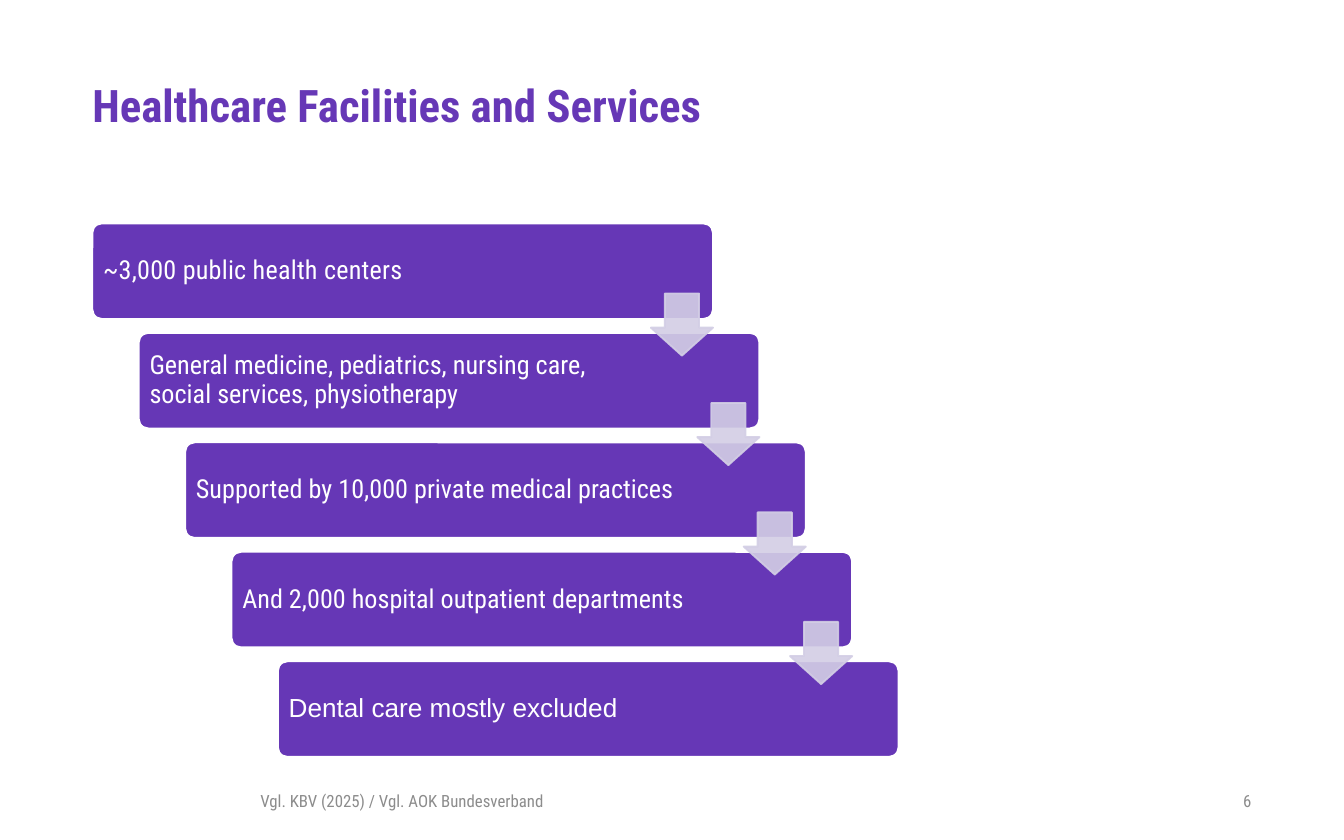
from lxml.etree import SubElement
from pptx import Presentation
from pptx.dml.color import RGBColor
from pptx.enum.shapes import MSO_SHAPE
from pptx.enum.text import MSO_ANCHOR, MSO_AUTO_SIZE, PP_ALIGN
from pptx.oxml.ns import qn
from pptx.util import Pt

PURPLE = RGBColor(0x66, 0x37, 0xB6)
TITLE_PURPLE = RGBColor(0x66, 0x38, 0xB6)
LILAC = RGBColor(0xD3, 0xCE, 0xE5)
GRAY = RGBColor(0x8C, 0x8C, 0x8C)
WHITE = RGBColor(0xFF, 0xFF, 0xFF)

CONDENSED = "Roboto Condensed"
STEP_X, STEP_Y = 24.85, 58.65
STEPS = [
    ("~3,000 public health centers", CONDENSED, 10),
    ("General medicine, pediatrics, nursing care, social services, physiotherapy", CONDENSED, 0),
    ("Supported by 10,000 private medical practices", CONDENSED, 0),
    ("And 2,000 hospital outpatient departments", CONDENSED, 0),
    ("Dental care mostly excluded", "Arial", 0),
]


class StairSlide:
    title_font = {"name": CONDENSED, "size": Pt(24), "bold": True}
    step_font = {"size": Pt(14), "bold": False}
    footer_font = {"name": CONDENSED, "size": Pt(9), "bold": False}

    def __init__(self, prs):
        self.s = prs.slides.add_slide(prs.slide_layouts[5])

    def text(self, sp, text, font, color, margins=(0, 0, 0, 0),
             anchor=MSO_ANCHOR.MIDDLE, align=PP_ALIGN.LEFT, spacing=1.0, tracking=0):
        tf = sp.text_frame
        frame = {"word_wrap": True, "auto_size": MSO_AUTO_SIZE.NONE, "vertical_anchor": anchor}
        sides = ("margin_left", "margin_top", "margin_right", "margin_bottom")
        frame.update(zip(sides, map(Pt, margins)))
        for name, value in frame.items():
            setattr(tf, name, value)
        p = tf.paragraphs[0]
        p.alignment, p.line_spacing = align, spacing
        r = p.add_run()
        r.text = text
        for name, value in font.items():
            setattr(r.font, name, value)
        r.font.color.rgb = color
        if tracking:
            r._r.get_or_add_rPr().set("spc", str(tracking))

    def title(self, text, box):
        sp = self.s.shapes.title
        sp.left, sp.top, sp.width, sp.height = map(Pt, box)
        self.text(sp, text, self.title_font, TITLE_PURPLE, anchor=MSO_ANCHOR.TOP, spacing=0.9)

    def shape(self, kind, box, adjustments, fill, line):
        sp = self.s.shapes.add_shape(kind, *map(Pt, box))
        sp.shadow.inherit = False
        for i, value in enumerate(adjustments):
            sp.adjustments[i] = value
        sp.fill.solid()
        sp.fill.fore_color.rgb = fill
        sp.line.color.rgb = line
        sp.line.width = Pt(1)
        return sp

    def step(self, text, face, tracking, box):
        sp = self.shape(MSO_SHAPE.ROUNDED_RECTANGLE, box, [0.1], PURPLE, WHITE)
        self.text(sp, text, {**self.step_font, "name": face}, WHITE,
                  margins=(4.3, 4.3, 62.5, 4.3), spacing=0.9, tracking=tracking)

    def arrow(self, box):
        sp = self.shape(MSO_SHAPE.DOWN_ARROW, box, [0.55, 0.45], LILAC, LILAC)
        for color in sp._element.spPr.iter(qn("a:srgbClr")):
            SubElement(color, qn("a:alpha"), val="90000")

    def footer(self, text, box, align=PP_ALIGN.LEFT):
        sp = self.s.shapes.add_textbox(*map(Pt, box))
        self.text(sp, text, self.footer_font, GRAY, align=align)


def main():
    prs = Presentation()
    prs.slide_width, prs.slide_height = Pt(720), Pt(450)
    slide = StairSlide(prs)
    slide.title("Healthcare Facilities and Services", (49.5, 44.64, 621, 23))
    for i, (text, face, tracking) in enumerate(STEPS):
        slide.step(text, face, tracking, (49.5 + i * STEP_X, 119.7 + i * STEP_Y, 332.5, 51.2))
    for i in range(len(STEPS) - 1):
        slide.arrow((348.7 + i * STEP_X, 157.2 + i * STEP_Y, 33.3, 33.3))
    slide.footer("Vgl. KBV (2025) / Vgl. AOK Bundesverband", (139.5, 417, 479.5, 24))
    slide.footer("6", (618.5, 417, 52, 24), PP_ALIGN.RIGHT)
    prs.save("out.pptx")


if __name__ == "__main__":
    main()
